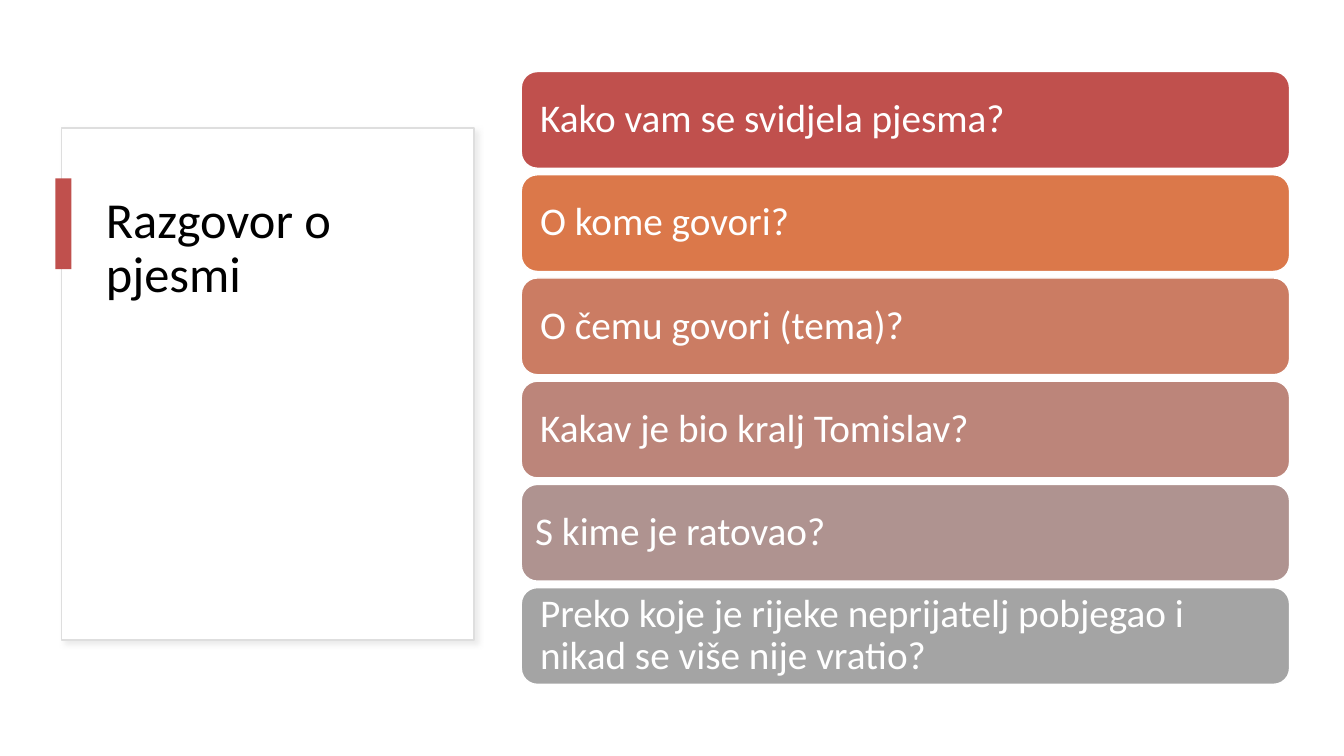
"""Build the slide of talking points about the poem."""
from lxml import etree
from pptx import Presentation
from pptx.dml.color import RGBColor
from pptx.enum import shapes, text
from pptx.oxml.ns import qn
from pptx.util import Inches, Pt

TITLE = "Razgovor o pjesmi"
ITEMS = [
    ("Kako vam se svidjela pjesma?", "C0504D", 0.14),
    ("O kome govori?", "DB784A", 0.14),
    ("O čemu govori (tema)?", "CB7C63", 0.14),
    ("Kakav je bio kralj Tomislav?", "BC857A", 0.14),
    ("S kime je ratovao?", "AF9390", 0.09),
    ("Preko koje je rijeke neprijatelj pobjegao i nikad se više nije vratio?",
     "A4A4A4", 0.14),
]
CARD = (0.61, 1.27, 4.09, 5.08)
HEAD = (0.95, 1.88, 3.39, 3.85)
BAR = (0.55, 1.77, 0.16, 0.9)
LEFT, TOP, WIDTH, HIGH, STEP = 5.17, 0.71, 7.62, 0.96, 1.024


def paint(form, color):
    """Set a solid colour on a fill or font colour."""
    if hasattr(form, "solid"):
        form.solid()
        form = form.fore_color
    form.rgb = RGBColor.from_string(color)


def write(shape, words, size, color, anchor, pads):
    """Put formatted text in a shape."""
    frame = shape.text_frame
    frame.word_wrap = True
    frame.auto_size = text.MSO_AUTO_SIZE.NONE
    frame.vertical_anchor = anchor
    sides = [Inches(pad) for pad in pads]
    (frame.margin_left, frame.margin_top,
     frame.margin_right, frame.margin_bottom) = sides
    para = frame.paragraphs[0]
    para.alignment = text.PP_ALIGN.LEFT
    para.line_spacing = 0.9
    run = para.add_run()
    run.text = words
    run.font.name = "Calibri"
    run.font.size = Pt(size)
    paint(run.font.color, color)


def block(slide, kind, box, fill, line=None):
    """Draw a filled shape, outlined if a line colour is given."""
    shape = slide.shapes.add_shape(kind, *map(Inches, box))
    shape.shadow.inherit = False
    paint(shape.fill, fill)
    if line:
        paint(shape.line.fill, line)
        shape.line.width = Pt(1)
    else:
        shape.line.fill.background()
    return shape


def shade(shape):
    """Give a shape a soft shadow to the lower right."""
    effects = shape.element.spPr.find(qn("a:effectLst"))
    outer = etree.SubElement(effects, qn("a:outerShdw"), {
        "blurRad": str(Pt(4)), "dist": str(Pt(3)),
        "dir": "2700000", "algn": "tl", "rotWithShape": "0"})
    tint = etree.SubElement(outer, qn("a:srgbClr"), val="D8D8D8")
    etree.SubElement(tint, qn("a:alpha"), val="49000")


def main():
    deck = Presentation()
    deck.slide_width, deck.slide_height = Inches(13.33), Inches(7.5)
    slide = deck.slides.add_slide(deck.slide_layouts[5])
    kinds = shapes.MSO_SHAPE

    card = block(slide, kinds.RECTANGLE, CARD, "FFFFFF", "DEDEDE")
    shade(card)
    title = slide.shapes.title
    card.element.addnext(title.element)
    title.left, title.top, title.width, title.height = map(Inches, HEAD)
    write(title, TITLE, 36, "000000", text.MSO_ANCHOR.TOP,
          (0.1, 0.05, 0.1, 0.05))
    block(slide, kinds.RECTANGLE, BAR, "C0504D")

    for row, (words, color, pad) in enumerate(ITEMS):
        box = (LEFT, TOP + row * STEP, WIDTH, HIGH)
        item = block(slide, kinds.ROUNDED_RECTANGLE, box, color, "FFFFFF")
        write(item, words, 28, "FFFFFF", text.MSO_ANCHOR.MIDDLE,
              (pad, 0.14, 0.14, 0.14))
    deck.save("out.pptx")


if __name__ == "__main__":
    main()
